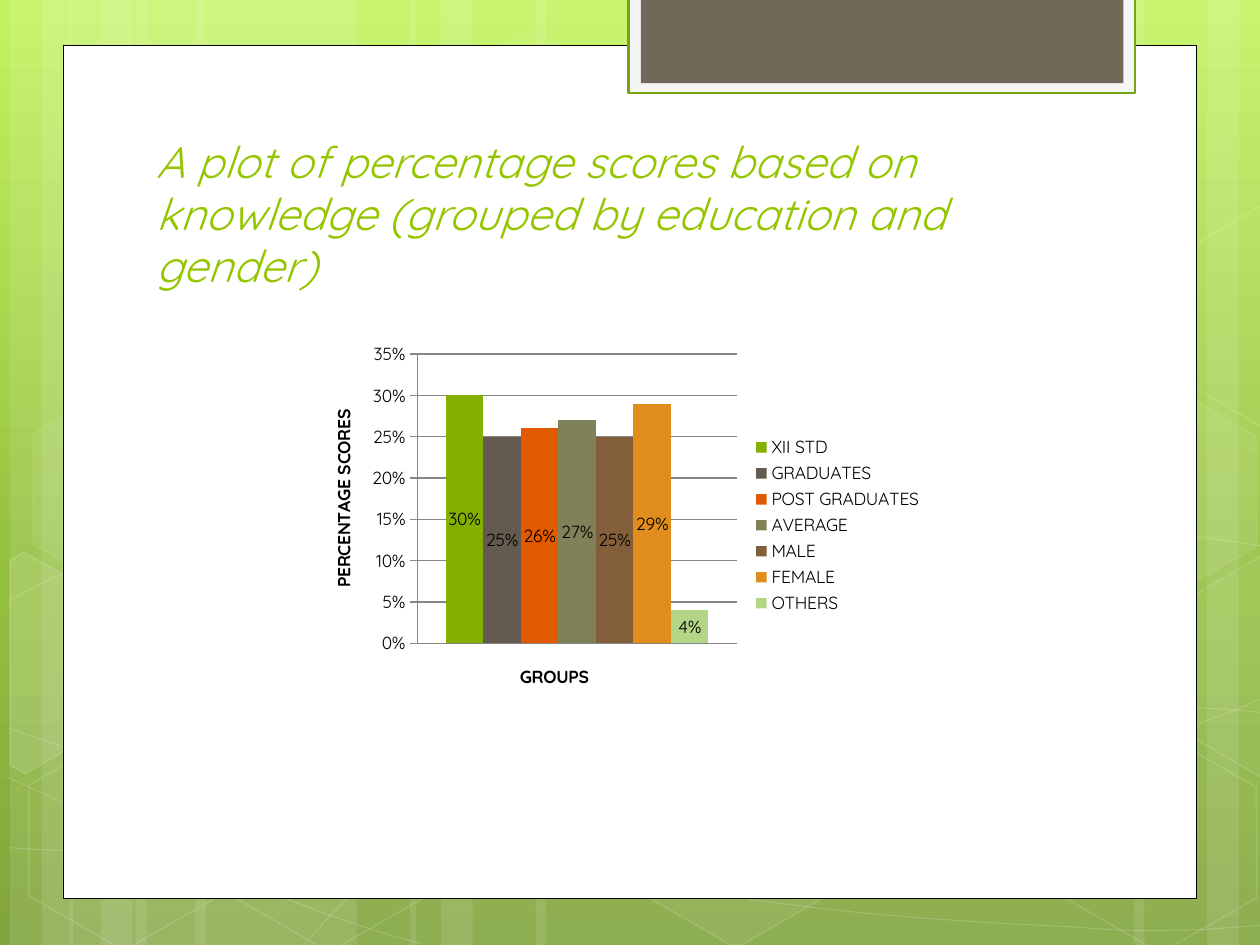
from copy import deepcopy
from math import cos, radians, sin
from typing import NamedTuple, Optional

from lxml.etree import SubElement
from pptx import Presentation
from pptx.chart.data import CategoryChartData
from pptx.dml.color import RGBColor
from pptx.enum.chart import XL_CHART_TYPE, XL_LABEL_POSITION, XL_LEGEND_POSITION, XL_TICK_MARK
from pptx.enum.shapes import MSO_SHAPE
from pptx.enum.text import MSO_ANCHOR
from pptx.oxml.ns import qn
from pptx.util import Cm, Pt

FONT = "Quicksand"
WHITE = RGBColor(0xFF, 0xFF, 0xFF)
BLACK = RGBColor(0x00, 0x00, 0x00)
PALE = RGBColor(0xF5, 0xF5, 0xF5)
BROWN = RGBColor(0x71, 0x68, 0x5A)
EDGE_GREEN = RGBColor(0x74, 0xA5, 0x10)
TITLE_GREEN = RGBColor(0x94, 0xC6, 0x00)
GRID_GREY = RGBColor(0x86, 0x86, 0x86)
BACKDROP = [(0, RGBColor(0xC3, 0xF3, 0x5F)), (0.62, RGBColor(0x93, 0xBF, 0x3F)), (1, RGBColor(0x81, 0xA5, 0x3E))]
TILT = 30


class Paint(NamedTuple):
    color: RGBColor
    opacity: int = 100


class Box(NamedTuple):
    left: float
    top: float
    width: float
    height: float


class Hexagon(NamedTuple):
    left: float
    top: float
    fill: int
    line: int


class CutHexagon(NamedTuple):
    center: tuple
    points: list
    fill: int


class Group(NamedTuple):
    name: str
    score: float
    color: RGBColor


CHART = Box(6.15, 6.78, 12.7, 7.62)
PLOT = Box(2.27, 0.36, 6.43, 5.83)
BANDS = [
    (2.74, 4.45), (0.2, 1.27), (0.84, 2.12), (3.94, 4.45), (1.4, 1.27), (2.03, 2.12),
    (18.62, 4.45), (24.33, 1.27), (22.86, 2.12), (10.8, 7.82), (8.26, 1.27), (8.89, 2.12),
]
CURVES = [
    [(0.18, 17.09), (1.55, 17.17), (2.92, 17.25), (4.83, 17.22), (6.73, 17.2), (9.09, 17.15), (11.63, 16.89),
     (14.17, 16.64), (17.78, 16.16), (20.12, 15.67), (22.43, 15.19), (24.82, 14.43), (25.58, 14)],
    [(0.18, 12.12), (0.91, 11.71), (1.65, 11.33), (3.07, 10.95), (4.52, 10.57), (6.58, 10.01), (8.81, 9.83),
     (11.07, 9.65), (13.82, 9.63), (16.61, 9.83), (19.41, 10.03), (24.05, 10.82), (25.58, 11.02)],
    [(0.15, 15.67), (3.23, 17.07), (6.27, 18.47), (8.48, 19.02)],
    [(0.18, 14.68), (0.97, 14.96), (1.78, 15.24), (3.25, 15.65), (4.72, 16.03), (6.93, 16.66), (9.07, 17.09),
     (11.18, 17.53), (13.84, 17.98), (15.95, 18.24), (18.06, 18.52), (20.32, 18.62), (21.67, 18.69),
     (22.99, 18.8), (23.34, 18.75), (24, 18.75), (24.66, 18.72), (25.12, 18.67), (25.58, 18.64)],
    [(6.15, 19.02), (6.6, 18.52), (7.06, 18.01), (7.67, 17.55), (8.28, 17.09), (9.14, 16.59), (9.86, 16.23),
     (10.57, 15.88), (11, 15.72), (11.94, 15.47), (12.85, 15.21), (14.55, 14.86), (15.44, 14.68),
     (16.36, 14.5), (16.48, 14.5), (17.27, 14.45), (18.06, 14.38), (19.3, 14.3), (20.17, 14.27),
     (21.06, 14.25), (22.5, 14.27), (22.5, 14.27), (22.5, 14.27), (24.21, 14.27), (24.21, 14.27),
     (24.66, 14.3), (25.1, 14.33), (25.32, 14.35), (25.55, 14.38), (25.48, 14.35), (25.55, 14.38)],
]
HEXAGONS = [
    Hexagon(8.48, 0.91, 4, 8), Hexagon(12.62, 14.96, 6, 12), Hexagon(0.28, 15.01, 0, 12),
    Hexagon(0.36, 7.92, 7, 8), Hexagon(4.42, 15.04, 0, 12), Hexagon(19.13, 11.51, 10, 12),
    Hexagon(21.18, 15.06, 0, 12), Hexagon(21.18, 7.98, 7, 8),
]
CUT_HEXAGONS = [
    CutHexagon((0.91, 13.59), [(0.2, 11.3), (0.48, 11.13), (2.44, 12.24), (2.41, 14.48), (0.51, 15.6), (0.2, 15.42)], 10),
    CutHexagon((25.02, 13.21), [(23.52, 12.32), (25.43, 11.2), (25.63, 11.33), (25.63, 15.57), (25.45, 15.67), (23.52, 14.55)], 4),
    CutHexagon((25.02, 6.12), [(23.52, 5.26), (25.43, 4.14), (25.65, 4.27), (25.63, 8.51), (25.45, 8.61), (23.52, 7.49)], 0),
]
GROUPS = [
    Group("XII STD", 0.3, RGBColor(0x82, 0xAF, 0x00)),
    Group("GRADUATES", 0.25, RGBColor(0x63, 0x5B, 0x4F)),
    Group("POST GRADUATES", 0.26, RGBColor(0xE1, 0x5A, 0x00)),
    Group("AVERAGE", 0.27, RGBColor(0x7F, 0x82, 0x59)),
    Group("MALE", 0.25, RGBColor(0x83, 0x5E, 0x3B)),
    Group("FEMALE", 0.29, RGBColor(0xE0, 0x8D, 0x1E)),
    Group("OTHERS", 0.04, RGBColor(0xB3, 0xD6, 0x86)),
]


def apply_paint(fill, owner, paint: Optional[Paint]) -> None:
    """Fill with a solid colour and opacity, or with nothing."""
    if paint is None or not paint.opacity:
        fill.background()
        return
    fill.solid()
    fill.fore_color.rgb = paint.color
    if paint.opacity < 100:
        color = owner.find(f"{qn('a:solidFill')}/{qn('a:srgbClr')}")
        SubElement(color, qn("a:alpha"), val=str(paint.opacity * 1000))


def style(shape, fill: Optional[Paint], line: Optional[Paint] = None, weight: float = 1) -> None:
    """Set the fill and outline of a shape and drop its shadow."""
    shape.shadow.inherit = False
    properties = shape.element.spPr
    apply_paint(shape.fill, properties, fill)
    shape.line.width = Pt(weight)
    apply_paint(shape.line.fill, properties.find(qn("a:ln")), line)


def add_box(page, kind: MSO_SHAPE, box: Box):
    """Add a preset shape placed in centimetres."""
    return page.shapes.add_shape(kind, *(Cm(length) for length in box))


def add_outline(page, points: list, closed: bool):
    """Add a freeform through points given in centimetres."""
    corners = [(Cm(x), Cm(y)) for x, y in points]
    builder = page.shapes.build_freeform(*corners[0])
    builder.add_line_segments(corners[1:], close=closed)
    return builder.convert_to_shape()


def add_curve(page, controls: list):
    """Add an open chain of cubic Bézier curves."""
    shape = add_outline(page, controls, False)
    segments = list(shape.element.iter(qn("a:lnTo")))
    for start in range(0, len(segments), 3):
        trio = segments[start:start + 3]
        curve = SubElement(trio[0].getparent(), qn("a:cubicBezTo"))
        for segment in trio:
            curve.append(segment[0])
            segment.getparent().remove(segment)
    return shape


def untilt(point: tuple, center: tuple) -> tuple:
    """Turn a point back by the tilt around a centre."""
    x, y = point[0] - center[0], point[1] - center[1]
    cosine, sine = cos(radians(TILT)), sin(radians(TILT))
    return center[0] + x * cosine + y * sine, center[1] - x * sine + y * cosine


def draw_backdrop(page) -> None:
    """Draw the gradient, bands, curves and hexagons."""
    fill = page.background.fill
    fill.gradient()
    fill.gradient_angle = 270
    stops = page.element.find(f".//{qn('a:gsLst')}")
    stops.append(deepcopy(stops[-1]))
    for stop, (position, color) in zip(fill.gradient_stops, BACKDROP):
        stop.position = position
        stop.color.rgb = color
    for left, width in BANDS:
        style(add_box(page, MSO_SHAPE.RECTANGLE, Box(left, 0, width, 19.05)), Paint(WHITE, 10))
    for controls in CURVES:
        style(add_curve(page, controls), None, Paint(WHITE, 20), 0.5)
    for hexagon in HEXAGONS:
        shape = add_box(page, MSO_SHAPE.HEXAGON, Box(hexagon.left, hexagon.top, 4.45, 3.86))
        shape.adjustments[0] = 0.29
        shape.rotation = TILT
        style(shape, Paint(WHITE, hexagon.fill), Paint(WHITE, hexagon.line))
    for cut in CUT_HEXAGONS:
        shape = add_outline(page, [untilt(point, cut.center) for point in cut.points], True)
        shape.rotation = TILT
        style(shape, Paint(WHITE, cut.fill), Paint(WHITE, 12))


def draw_panel(page) -> None:
    """Draw the white panel and the tab at its top."""
    style(add_box(page, MSO_SHAPE.RECTANGLE, Box(1.27, 0.91, 22.86, 17.2)), Paint(WHITE), Paint(BLACK), 0.5)
    style(add_box(page, MSO_SHAPE.RECTANGLE, Box(12.67, -0.05, 10.21, 1.93)), Paint(PALE), Paint(EDGE_GREEN), 1.25)
    style(add_box(page, MSO_SHAPE.RECTANGLE, Box(12.92, -0.05, 9.73, 1.73)), Paint(BROWN))


def draw_title(page) -> None:
    """Write the slide title."""
    frame = page.shapes.add_textbox(Cm(2.9), Cm(2.85), Cm(19.51), Cm(3.18)).text_frame
    frame.word_wrap = True
    frame.vertical_anchor = MSO_ANCHOR.BOTTOM
    para = frame.paragraphs[0]
    para.text = "A plot of percentage scores based on knowledge (grouped by education and gender)"
    para.line_spacing = 0.98
    para.font.name, para.font.size, para.font.italic = FONT, Pt(25.2), True
    para.font.color.rgb = TITLE_GREEN


def title_axis(axis, text: str) -> None:
    """Give an axis a bold title."""
    para = axis.axis_title.text_frame.paragraphs[0]
    para.text = text
    para.font.name, para.font.size, para.font.bold = FONT, Pt(10), True
    para.font.color.rgb = BLACK


def place_plot(chart) -> None:
    """Fix the inner plot area within the chart."""
    area = chart.plots[0]._element.getparent()
    for old in area.findall(qn("c:layout")):
        area.remove(old)
    layout = SubElement(area, qn("c:layout"))
    area.insert(0, layout)
    manual = SubElement(layout, qn("c:manualLayout"))
    sides = (CHART.width, CHART.height) * 2
    shares = [round(length / side, 4) for length, side in zip(PLOT, sides)]
    for name, value in [("layoutTarget", "inner"), ("xMode", "edge"), ("yMode", "edge"), *zip("xywh", shares)]:
        SubElement(manual, qn(f"c:{name}"), val=str(value))


def draw_chart(page) -> None:
    """Draw the clustered columns of percentage scores."""
    data = CategoryChartData(number_format="0%")
    data.categories = ["1"]
    for group in GROUPS:
        data.add_series(group.name, [group.score])
    frame = page.shapes.add_chart(XL_CHART_TYPE.COLUMN_CLUSTERED, *(Cm(length) for length in CHART), data)
    chart = frame.chart
    chart.has_title = False
    chart.font.name, chart.font.size = FONT, Pt(10)
    chart.font.color.rgb = BLACK
    chart.has_legend = True
    chart.legend.position = XL_LEGEND_POSITION.RIGHT
    chart.legend.include_in_layout = False
    plot = chart.plots[0]
    plot.gap_width, plot.overlap, plot.vary_by_categories = 150, 0, False
    for series, group in zip(plot.series, GROUPS):
        series.format.fill.solid()
        series.format.fill.fore_color.rgb = group.color
        labels = series.data_labels
        labels.show_value = True
        labels.position = XL_LABEL_POSITION.CENTER
        labels.number_format, labels.number_format_is_linked = "0%", False
    scores = chart.value_axis
    scores.major_tick_mark = XL_TICK_MARK.OUTSIDE
    scores.tick_labels.number_format, scores.tick_labels.number_format_is_linked = "0%", False
    for line in (scores.format.line, scores.major_gridlines.format.line):
        line.color.rgb = GRID_GREY
        line.width = Pt(0.75)
    title_axis(scores, "PERCENTAGE SCORES")
    title_axis(chart.category_axis, "GROUPS")
    chart.category_axis.visible = False
    place_plot(chart)


def main() -> None:
    """Build and save the deck."""
    deck = Presentation()
    deck.slide_width, deck.slide_height = Cm(25.4), Cm(19.05)
    page = deck.slides.add_slide(deck.slide_layouts[6])
    draw_backdrop(page)
    draw_panel(page)
    draw_title(page)
    draw_chart(page)
    deck.save("out.pptx")


if __name__ == "__main__":
    main()
